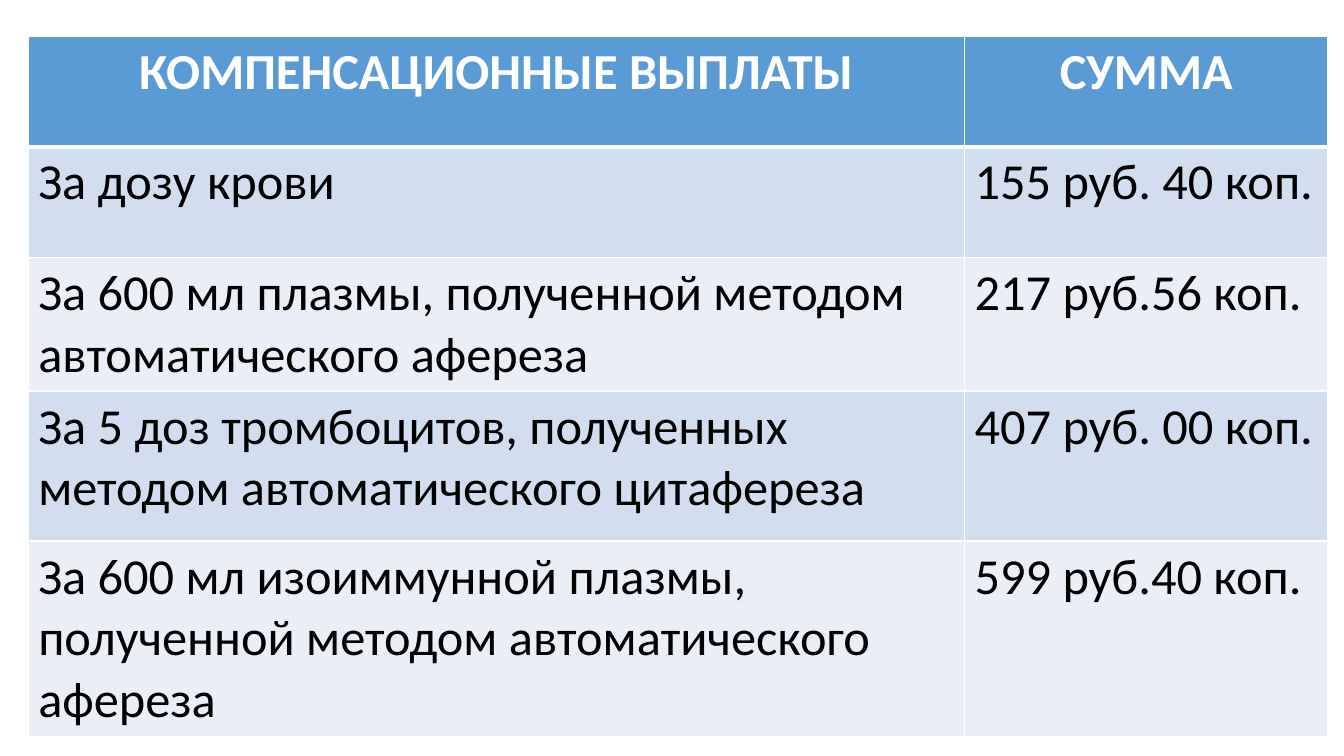
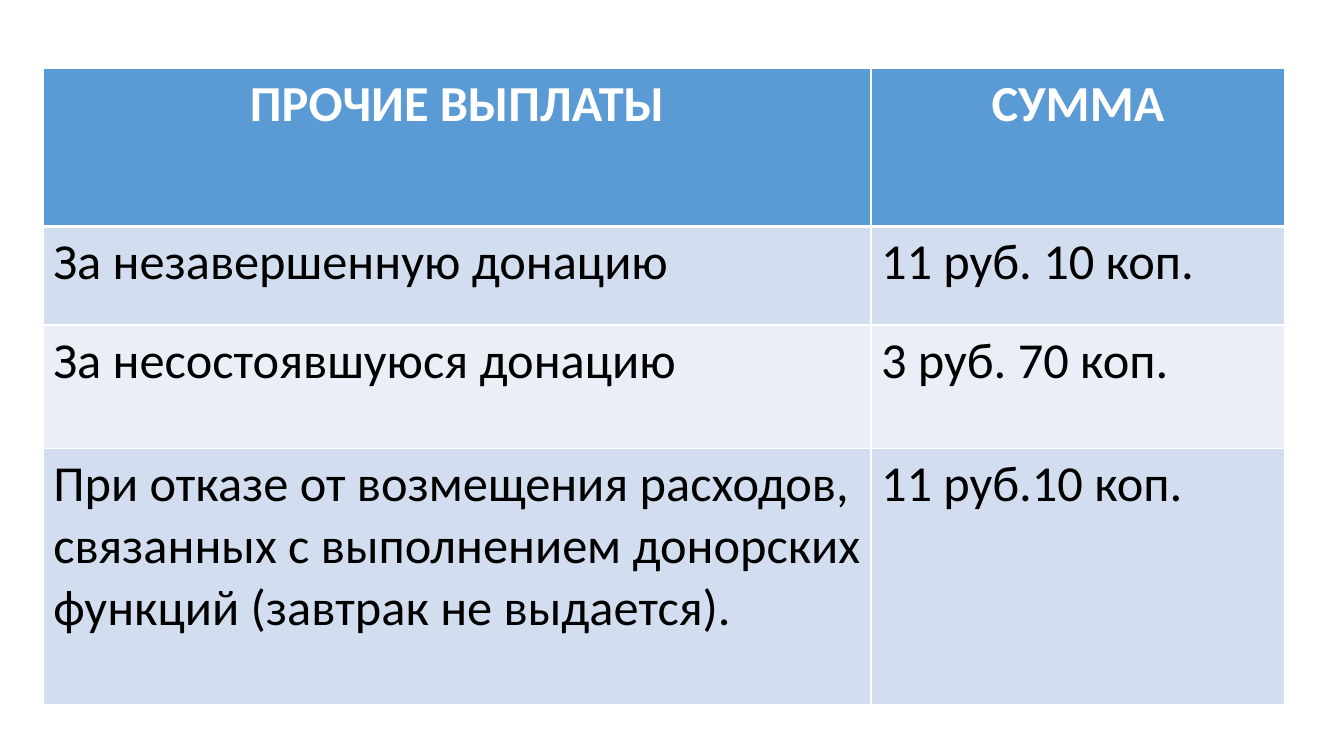
from lxml import etree
from pptx import Presentation
from pptx.dml.color import RGBColor
from pptx.enum.text import PP_ALIGN as Align
from pptx.oxml.ns import qn
from pptx.util import Cm, Pt

# Shared look
FONT, SIZE = "Calibri", 36
WHITE, BLACK = "FFFFFF", "000000"
HEADER_FILL = "5B9BD5"
BAND_FILLS = ["D2DEEF", "EAEFF7"]
THIN, THICK = 1, 3


def color(hex_code):
    return RGBColor.from_string(hex_code)


def set_borders(cell, widths):
    """Draw white left, right, top and bottom borders, widths in points."""
    properties = cell._tc.get_or_add_tcPr()
    for index, (side, width) in enumerate(zip("LRTB", widths)):
        line = etree.Element(qn(f"a:ln{side}"), w=str(Pt(width)))
        solid = etree.SubElement(line, qn("a:solidFill"))
        etree.SubElement(solid, qn("a:srgbClr"), val=WHITE)
        properties.insert(index, line)


# Content: position, column widths and row heights in cm, then the rows
payment_tables = [
    {
        "left": 0.71, "top": 0.91,
        "columns": [23.6, 9.15],
        "heights": [2.79, 2.79, 3.35, 3.78, 4.9],
        "rows": [
            ("КОМПЕНСАЦИОННЫЕ ВЫПЛАТЫ", "СУММА"),
            ("За дозу крови", "155 руб. 40 коп."),
            ("За 600 мл плазмы, полученной методом автоматического афереза",
             "217 руб.56 коп."),
            ("За 5 доз тромбоцитов, полученных методом автоматического цитафереза",
             "407 руб. 00 коп."),
            ("За 600 мл изоиммунной плазмы, полученной методом автоматического афереза",
             "599 руб.40 коп."),
        ],
    },
    {
        "left": 1.09, "top": 1.73,
        "columns": [20.86, 10.43],
        "heights": [3.98, 2.48, 3.12, 6.45],
        "rows": [
            ("ПРОЧИЕ ВЫПЛАТЫ", "СУММА"),
            ("За незавершенную донацию", "11 руб. 10 коп."),
            ("За несостоявшуюся донацию", "3 руб. 70 коп."),
            ("При отказе от возмещения расходов, связанных с выполнением "
             "донорских функций (завтрак не выдается).", "11 руб.10 коп."),
        ],
    },
]

prs = Presentation()
prs.slide_width, prs.slide_height = Cm(33.87), Cm(19.05)
blank_layout = prs.slide_layouts[6]

# One slide for each table of payments
for payments in payment_tables:
    slide = prs.slides.add_slide(blank_layout)
    columns, heights, rows = payments["columns"], payments["heights"], payments["rows"]
    table = slide.shapes.add_table(
        len(rows), len(columns), Cm(payments["left"]), Cm(payments["top"]),
        Cm(sum(columns)), Cm(sum(heights))).table
    for column, width in zip(table.columns, columns):
        column.width = Cm(width)

    for row_index, (texts, height) in enumerate(zip(rows, heights)):
        table.rows[row_index].height = Cm(height)
        is_header = row_index == 0
        fill = HEADER_FILL if is_header else BAND_FILLS[(row_index - 1) % 2]
        top_border = THICK if row_index == 1 else THIN
        bottom_border = THICK if is_header else THIN

        for column_index, text in enumerate(texts):
            cell = table.cell(row_index, column_index)
            cell.fill.solid()
            cell.fill.fore_color.rgb = color(fill)
            set_borders(cell, [THIN, THIN, top_border, bottom_border])

            cell.text_frame.text = text
            paragraph = cell.text_frame.paragraphs[0]
            paragraph.alignment = Align.CENTER if is_header else Align.LEFT
            font = paragraph.runs[0].font
            font.name, font.size, font.bold = FONT, Pt(SIZE), is_header
            font.color.rgb = color(WHITE if is_header else BLACK)

prs.save("out.pptx")
